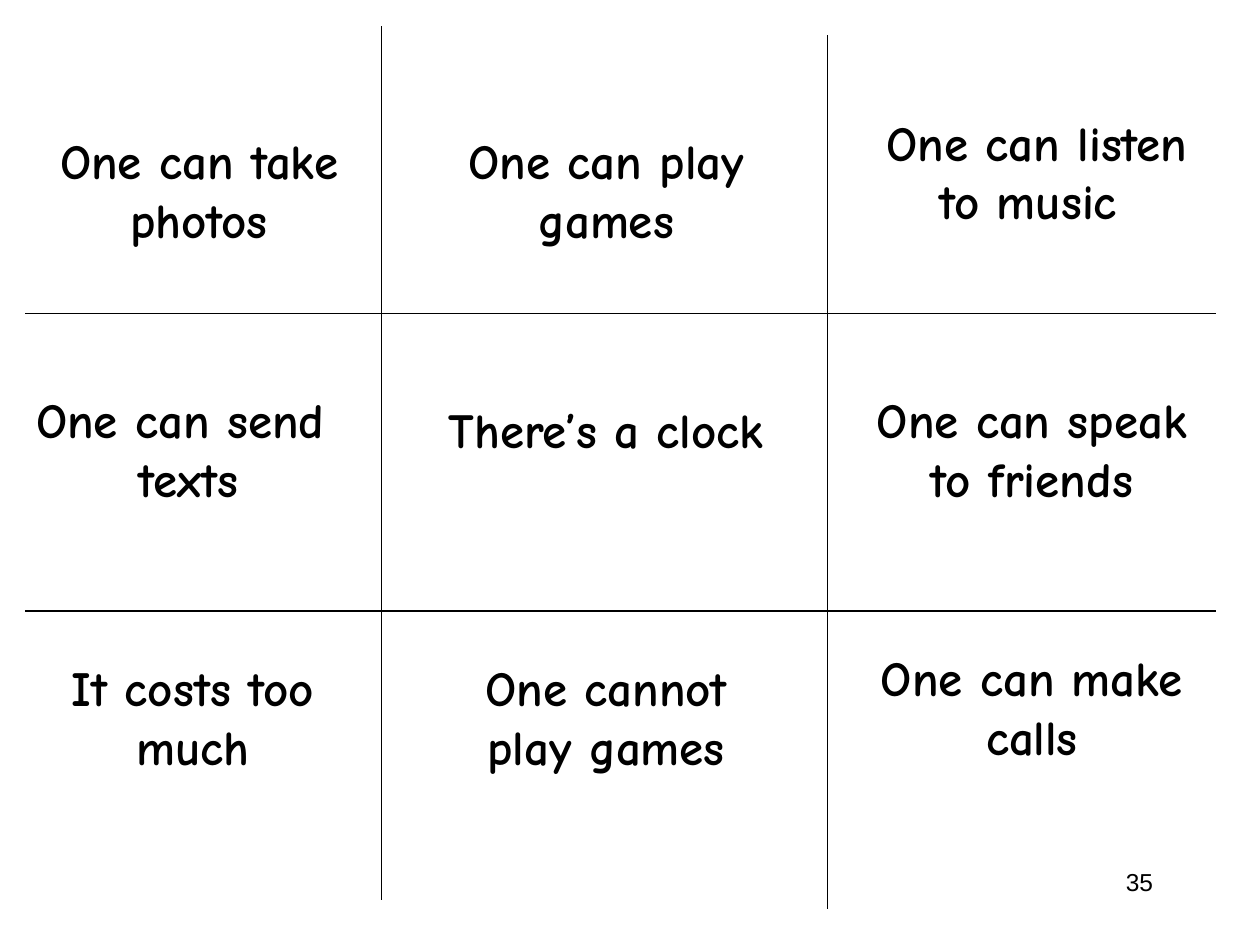
from dataclasses import dataclass

from lxml import etree
from pptx import Presentation
from pptx import util as u
from pptx.dml import color
from pptx.enum import shapes, text
from pptx.oxml import ns


@dataclass(frozen=True)
class Theme:
    ink: color.RGBColor = color.RGBColor(0, 0, 0)
    phrase_font: str = "Comic Neue"
    number_font: str = "Arial"
    phrase_size: float = 28
    number_size: float = 14
    line_width: float = 0.75


THEME = Theme()
PHRASE = {"name": THEME.phrase_font, "size": u.Pt(THEME.phrase_size), "bold": True}
NUMBER = {"name": THEME.number_font, "size": u.Pt(THEME.number_size), "bold": False}

ROW_LINES = (179.3, 349.2)
ROW_LINE_ENDS = (14.4, 694.8)
COLUMN_LINES = ((218.2, 15.1), (473, 20.2))
COLUMN_LINE_LENGTH = 499

CELL_WIDTH, CELL_HEIGHT = 198.7, 74.9
PHRASES = (
    ("One can take photos", 14.4, 71.3, CELL_WIDTH, CELL_HEIGHT),
    ("One can play games", 247, 71.3, CELL_WIDTH, CELL_HEIGHT),
    ("One can listen to music ", 490.3, 60.5, 204.5, 108.7),
    ("One can send  texts", 8.6, 218.9, CELL_WIDTH, CELL_HEIGHT),
    ("There’s a clock", 247, 224.6, CELL_WIDTH, CELL_HEIGHT),
    ("One can speak to friends", 490.3, 218.9, CELL_WIDTH, 108.7),
    ("It costs too much", 25.2, 372.2, 169.9, CELL_HEIGHT),
    ("One cannot play games", 247, 372.2, CELL_WIDTH, CELL_HEIGHT),
    ("One can make calls", 490.3, 366.5, CELL_WIDTH, CELL_HEIGHT),
)


def add_line(page, left, top, right, bottom):
    ends = [u.Pt(value) for value in (left, top, right, bottom)]
    line = page.shapes.add_connector(shapes.MSO_CONNECTOR.STRAIGHT, *ends)
    line.line.color.rgb = THEME.ink
    line.line.width = u.Pt(THEME.line_width)
    etree.SubElement(line._element.spPr, ns.qn("a:effectLst"))


def add_text(page, words, left, top, width, height, font, alignment):
    box = page.shapes.add_textbox(*[u.Pt(value) for value in (left, top, width, height)])
    box.text_frame.word_wrap = True
    para = box.text_frame.paragraphs[0]
    para.alignment = alignment
    span = para.add_run()
    span.text = words
    for key, value in font.items():
        setattr(span.font, key, value)
    span.font.color.rgb = THEME.ink


def add_grid(page):
    left, right = ROW_LINE_ENDS
    for height in ROW_LINES:
        add_line(page, left, height, right, height)
    for across, top in COLUMN_LINES:
        add_line(page, across, top, across, top + COLUMN_LINE_LENGTH)


def main():
    deck = Presentation()
    deck.slide_width, deck.slide_height = u.Pt(720), u.Pt(540)
    page = deck.slides.add_slide(deck.slide_layouts[6])
    add_grid(page)
    for phrase in PHRASES:
        add_text(page, *phrase, PHRASE, text.PP_ALIGN.CENTER)
    add_text(page, "35", 516.2, 491.8, 149.8, 36, NUMBER, text.PP_ALIGN.RIGHT)
    deck.save("out.pptx")


if __name__ == "__main__":
    main()
